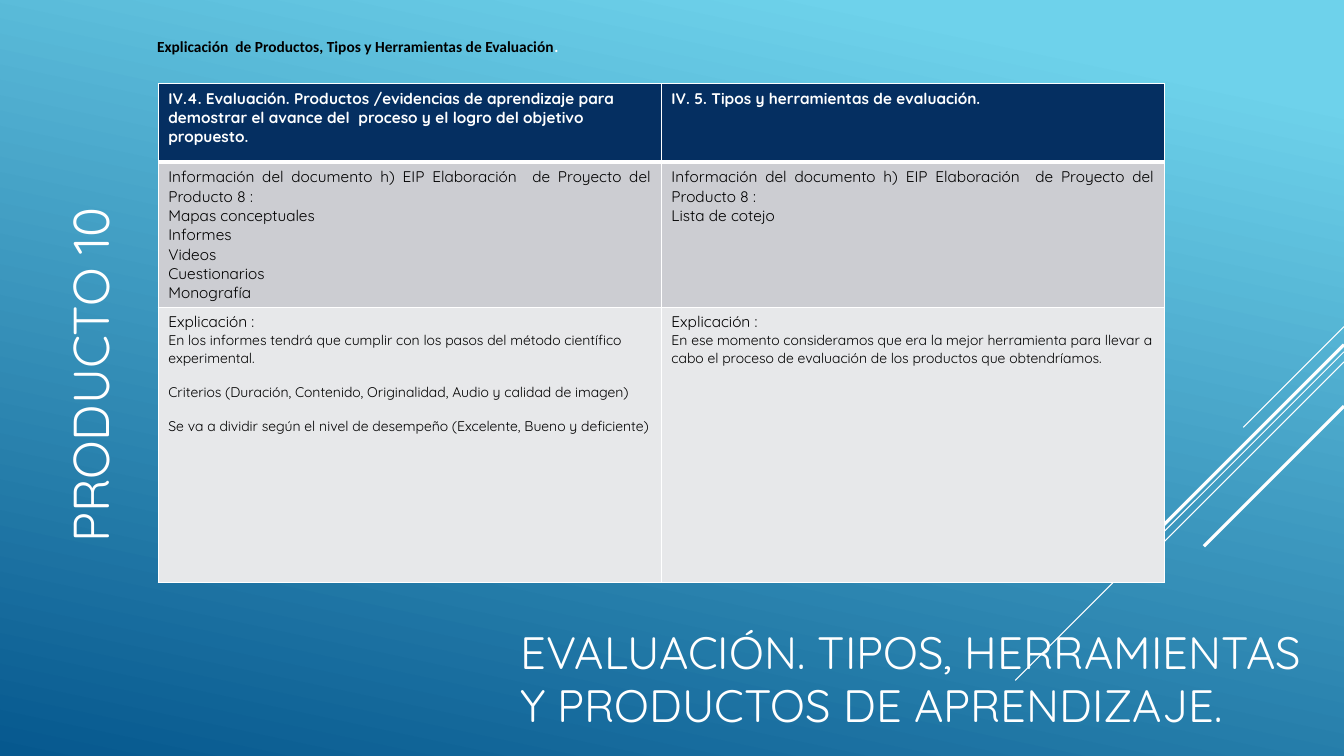
from lxml.etree import SubElement
from pptx import Presentation
from pptx.dml.color import RGBColor
from pptx.enum.shapes import MSO_CONNECTOR
from pptx.enum.text import MSO_ANCHOR, MSO_AUTO_SIZE, PP_ALIGN
from pptx.oxml.ns import qn
from pptx.util import Inches, Pt

WHITE = RGBColor(0xFF, 0xFF, 0xFF)
BLACK = RGBColor(0, 0, 0)
NAVY = RGBColor(0x05, 0x2F, 0x61)
GREY = RGBColor(0xCC, 0xCD, 0xD2)
PALE = RGBColor(0xE7, 0xE8, 0xEA)
SKY = RGBColor(0x6E, 0xD2, 0xEB)
OCEAN = RGBColor(0x06, 0x58, 0x8E)
FONT = "Quicksand"

TITLE = "EVALUACIÓN. TIPOS, HERRAMIENTAS Y PRODUCTOS DE APRENDIZAJE."
SIDE_LABEL = "PRODUCTO 10"
CAPTION = "Explicación  de Productos, Tipos y Herramientas de Evaluación"

SOURCE = "Información del documento h) EIP Elaboración  de Proyecto del Producto 8 :"
HEADERS = [
    ["IV.4. Evaluación. Productos /evidencias de aprendizaje para demostrar "
     "el avance del  proceso y el logro del objetivo propuesto."],
    ["IV. 5. Tipos y herramientas de evaluación."],
]
PRODUCTS = [
    [SOURCE, "Mapas conceptuales", "Informes", "Videos", "Cuestionarios", "Monografía"],
    [SOURCE, "Lista de cotejo"],
]
EXPLANATIONS = [
    ["Explicación :",
     "En los informes tendrá que cumplir con los pasos del método científico experimental.",
     "Criterios (Duración, Contenido, Originalidad, Audio y calidad de imagen)",
     "Se va a dividir según el nivel de desempeño (Excelente, Bueno y deficiente)"],
    ["Explicación :",
     "En ese momento consideramos que era la mejor herramienta para llevar a cabo "
     "el proceso de evaluación de los productos que obtendríamos."],
]
# cells, height, fill, text colour, bold, alignment, size after first paragraph
ROWS = [
    (HEADERS, 0.78, NAVY, WHITE, True, PP_ALIGN.LEFT, 11),
    (PRODUCTS, 1.44, GREY, BLACK, False, PP_ALIGN.JUSTIFY, 11),
    (EXPLANATIONS, 2.73, PALE, BLACK, False, PP_ALIGN.LEFT, 10),
]
COLUMN_WIDTH = 4.99

# start height on the right edge, run to the lower left at 45 degrees, line width
RAYS = [(3.24, 1, 0.75), (3.49, 3.26, 0.75), (3.59, 2.07, 0.75),
        (3.42, 1.91, 2.25), (4.03, 1.39, 2.25)]
PAGE_WIDTH = 13.33


def add_span(para, text, size, color, font=FONT, bold=False):
    span = para.add_run()
    span.text = text
    span.font.name = font
    span.font.size = Pt(size)
    span.font.bold = bold
    span.font.color.rgb = color


def place(box, left, top, width, height):
    box.left, box.top = Inches(left), Inches(top)
    box.width, box.height = Inches(width), Inches(height)


def add_ray(page, top, run, width):
    ray = page.shapes.add_connector(
        MSO_CONNECTOR.STRAIGHT, Inches(PAGE_WIDTH), Inches(top),
        Inches(PAGE_WIDTH - run), Inches(top + run))
    ray.line.color.rgb = WHITE
    ray.line.width = Pt(width)
    SubElement(ray.element.spPr, qn("a:effectLst"))


def set_borders(cell, bottom_width, top_width):
    """Draw white borders; these elements must come before the cell's fill."""
    properties = cell._tc.get_or_add_tcPr()
    widths = {"a:lnL": 1, "a:lnR": 1, "a:lnT": top_width, "a:lnB": bottom_width}
    for tag, width in widths.items():
        border = SubElement(properties, qn(tag), w=str(Pt(width)))
        fill = SubElement(border, qn("a:solidFill"))
        SubElement(fill, qn("a:srgbClr"), val=str(WHITE))


def add_evaluation_table(page):
    frame = page.shapes.add_table(
        len(ROWS), 2, Inches(1.57), Inches(0.83), Inches(2 * COLUMN_WIDTH),
        Inches(sum(row[1] for row in ROWS)))
    table = frame.table
    for column in table.columns:
        column.width = Inches(COLUMN_WIDTH)
    for r, (cells, height, fill, color, bold, align, size) in enumerate(ROWS):
        table.rows[r].height = Inches(height)
        for c, lines in enumerate(cells):
            cell = table.cell(r, c)
            set_borders(cell, 3 if r == 0 else 1, 3 if r == 1 else 1)
            cell.fill.solid()
            cell.fill.fore_color.rgb = fill
            for i, line in enumerate(lines):
                text = cell.text_frame
                para = text.paragraphs[0] if i == 0 else text.add_paragraph()
                para.alignment = align
                if cells is EXPLANATIONS and i > 1:
                    para.space_before = Pt(12)
                add_span(para, line, 11 if i == 0 else size, color, bold=bold)


def main():
    deck = Presentation()
    deck.slide_width, deck.slide_height = Inches(PAGE_WIDTH), Inches(7.5)
    page = deck.slides.add_slide(deck.slide_layouts[5])

    backdrop = page.background.fill
    backdrop.gradient()
    backdrop.gradient_angle = 360 - 102
    for stop, position, color in zip(backdrop.gradient_stops, (0.1, 1), (SKY, OCEAN)):
        stop.position = position
        stop.color.rgb = color

    for ray in RAYS:
        add_ray(page, *ray)

    title = page.shapes.title
    title.element.getparent().append(title.element)  # in front of the rays
    place(title, 5.06, 6.42, 8.19, 0.65)
    title.text_frame.auto_size = MSO_AUTO_SIZE.NONE
    title.text_frame.word_wrap = True
    title.text_frame.vertical_anchor = MSO_ANCHOR.MIDDLE
    heading = title.text_frame.paragraphs[0]
    heading.alignment = PP_ALIGN.LEFT
    heading.line_spacing = 0.97
    add_span(heading, TITLE, 32.4, WHITE)

    side = page.shapes.add_textbox(0, 0, 0, 0)
    place(side, -1.36, 2.8, 4.49, 0.88)
    side.rotation = 270
    side.text_frame.word_wrap = True
    side.text_frame.vertical_anchor = MSO_ANCHOR.MIDDLE
    add_span(side.text_frame.paragraphs[0], SIDE_LABEL, 36, WHITE)

    add_evaluation_table(page)

    caption = page.shapes.add_textbox(0, 0, 0, 0)
    place(caption, 1.46, 0.32, 10.55, 0.59)
    caption.text_frame.word_wrap = True
    para = caption.text_frame.paragraphs[0]
    add_span(para, CAPTION, 11, BLACK, "Calibri", True)
    add_span(para, ".", 11, WHITE, "Calibri", True)

    deck.save("out.pptx")


if __name__ == "__main__":
    main()
